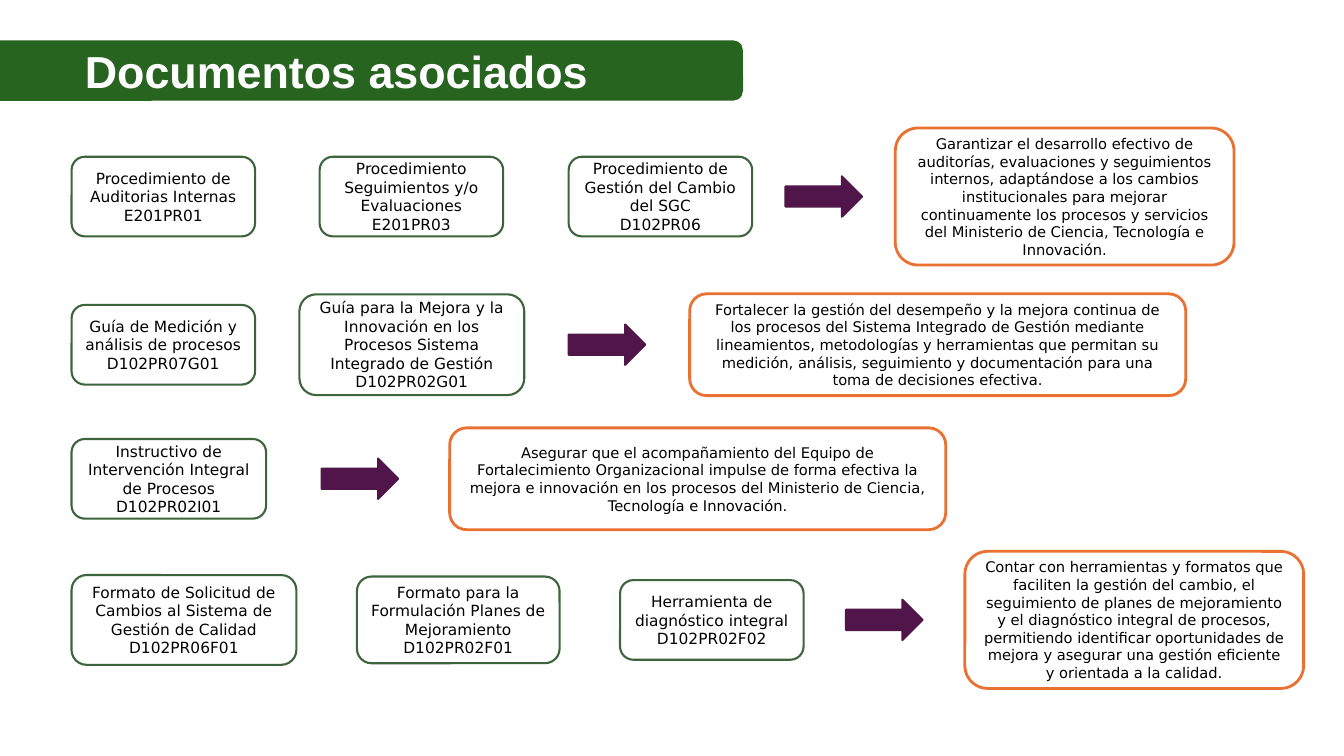
from dataclasses import dataclass

from pptx import Presentation
from pptx.dml.color import RGBColor
from pptx.enum.shapes import MSO_SHAPE
from pptx.enum.text import MSO_ANCHOR, PP_ALIGN
from pptx.util import Inches, Pt

ROUNDED = MSO_SHAPE.ROUNDED_RECTANGLE
ARROW = MSO_SHAPE.RIGHT_ARROW
MIDDLE = MSO_ANCHOR.MIDDLE
CENTER = PP_ALIGN.CENTER


@dataclass(frozen=True)
class Theme:
    banner: str = "27641F"
    document: str = "3D643D"
    purpose: str = "E97132"
    arrow: str = "501549"
    white: str = "FFFFFF"
    black: str = "000000"
    title_font: str = "Arial"
    body_font: str = "DejaVu Sans"
    title_size: float = 32
    document_size: float = 11
    purpose_size: float = 10.5


theme = Theme()


def add_block(kind, left, middle, width, height, fill=None, line=None, weight=1.5):
    """Add a preset shape centred vertically on middle."""
    shape = slide.shapes.add_shape(
        kind, Inches(left), Inches(middle - height / 2), Inches(width), Inches(height))
    shape.shadow.inherit = False
    if fill:
        shape.fill.solid()
        shape.fill.fore_color.rgb = RGBColor.from_string(fill)
    else:
        shape.fill.background()
    if line:
        shape.line.color.rgb = RGBColor.from_string(line)
        shape.line.width = Pt(weight)
    else:
        shape.line.fill.background()
    return shape


def write(shape, text, size, font=theme.body_font, color=theme.black, bold=False):
    """Fill a shape with centred text, one paragraph per line."""
    frame = shape.text_frame
    frame.word_wrap = True
    frame.vertical_anchor = MIDDLE
    for index, content in enumerate(text.split("\n")):
        paragraph = frame.add_paragraph() if index else frame.paragraphs[0]
        paragraph.alignment = CENTER
        run = paragraph.add_run()
        run.text = content
        run.font.name = font
        run.font.size = Pt(size)
        run.font.bold = bold
        run.font.color.rgb = RGBColor.from_string(color)


presentation = Presentation()
presentation.slide_width = Inches(13.33)
presentation.slide_height = Inches(7.5)
slide = presentation.slides.add_slide(presentation.slide_layouts[6])

# Title banner, bleeding off the left edge
banner = add_block(ROUNDED, -0.69, 0.7, 8.06, 0.6, fill=theme.banner)
write(banner, "Documentos asociados", theme.title_size, theme.title_font, theme.white, True)

# Each row: middle, documents (left, width, height, text), arrow left,
# purpose (left, width, height, text)
rows = [
    (1.95,
     [(0.71, 1.82, 0.79, "Procedimiento de Auditorias Internas E201PR01"),
      (3.17, 1.82, 0.79, "Procedimiento Seguimientos y/o Evaluaciones E201PR03"),
      (5.64, 1.82, 0.79, "Procedimiento de Gestión del Cambio del SGC\nD102PR06")],
     7.79,
     (8.88, 3.36, 1.36,
      "Garantizar el desarrollo efectivo de auditorías, evaluaciones y seguimientos "
      "internos, adaptándose a los cambios institucionales para mejorar continuamente "
      "los procesos y servicios del Ministerio de Ciencia, Tecnología e Innovación.")),
    (3.42,
     [(0.71, 1.82, 0.79, "Guía de Medición y análisis de procesos D102PR07G01"),
      (2.97, 2.23, 1, "Guía para la Mejora y la Innovación en los Procesos Sistema "
                      "Integrado de Gestión D102PR02G01")],
     5.64,
     (6.84, 4.92, 1.01,
      "Fortalecer la gestión del desempeño y la mejora continua de los procesos del "
      "Sistema Integrado de Gestión mediante lineamientos, metodologías y herramientas "
      "que permitan su medición, análisis, seguimiento y documentación para una toma "
      "de decisiones efectiva.")),
    (4.75,
     [(0.71, 1.93, 0.79, "Instructivo de Intervención Integral de Procesos D102PR02I01")],
     3.19,
     (4.46, 4.92, 1.01,
      "Asegurar que el acompañamiento del Equipo de Fortalecimiento Organizacional "
      "impulse de forma efectiva la mejora e innovación en los procesos del Ministerio "
      "de Ciencia, Tecnología e Innovación.")),
    (6.15,
     [(0.71, 2.23, 0.89, "Formato de Solicitud de Cambios al Sistema de Gestión de "
                         "Calidad D102PR06F01"),
      (3.54, 2.01, 0.86, "Formato para la Formulación Planes de Mejoramiento D102PR02F01"),
      (6.15, 1.82, 0.79, "Herramienta de diagnóstico integral D102PR02F02")],
     8.39,
     (9.57, 3.36, 1.36,
      "Contar con herramientas y formatos que faciliten la gestión del cambio, el "
      "seguimiento de planes de mejoramiento y el diagnóstico integral de procesos, "
      "permitiendo identificar oportunidades de mejora y asegurar una gestión eficiente "
      "y orientada a la calidad.")),
]

# Rows of documents leading to their purpose
for middle, documents, arrow_left, purpose in rows:
    for left, width, height, text in documents:
        document_box = add_block(ROUNDED, left, middle, width, height, line=theme.document)
        write(document_box, text, theme.document_size)
    add_block(ARROW, arrow_left, middle, 0.76, 0.4, theme.arrow, theme.arrow)
    left, width, height, text = purpose
    purpose_box = add_block(
        ROUNDED, left, middle, width, height, theme.white, theme.purpose, 2)
    write(purpose_box, text, theme.purpose_size)

presentation.save("out.pptx")
